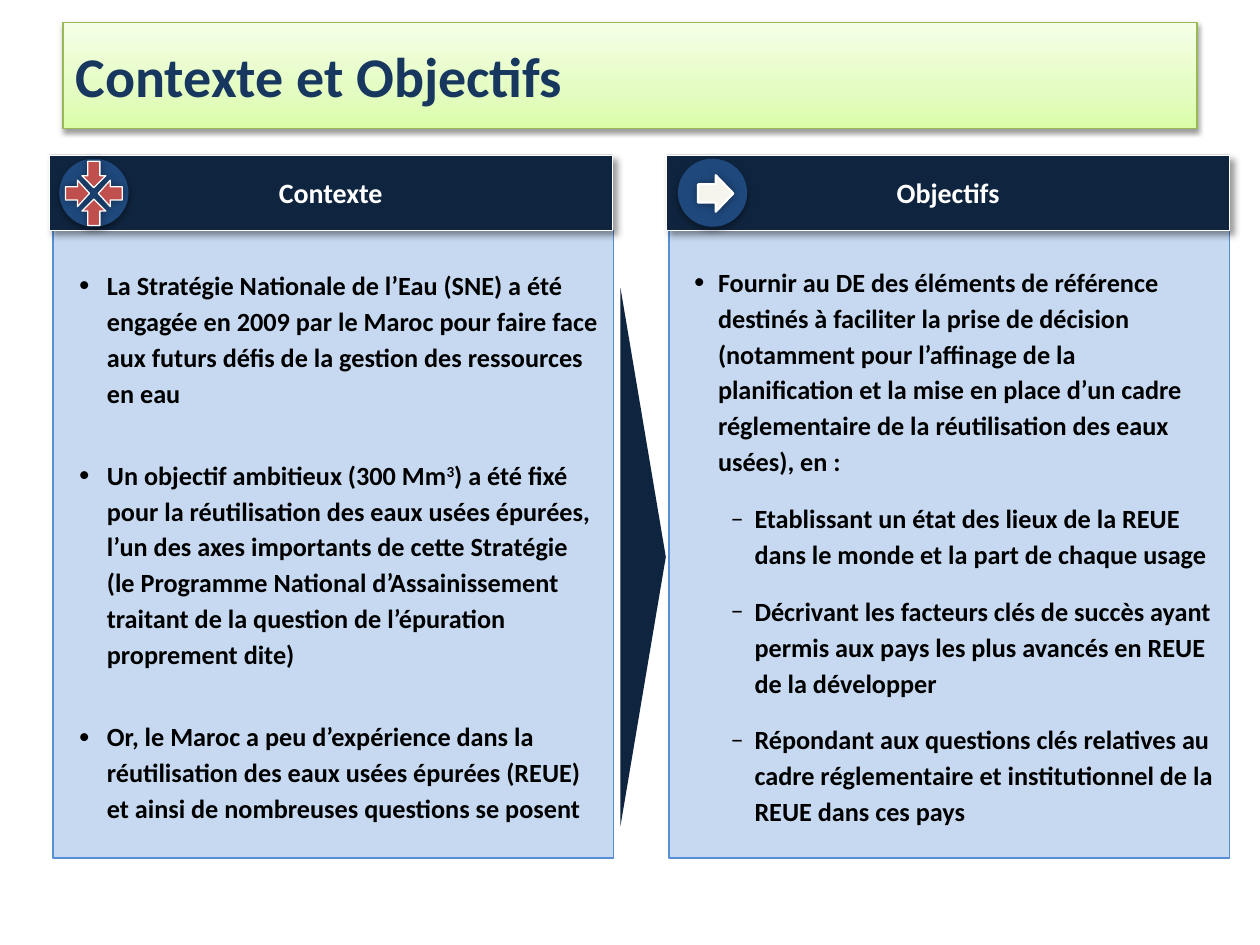
from copy import deepcopy

from lxml.etree import SubElement
from pptx import Presentation
from pptx.dml.color import RGBColor
from pptx.enum.shapes import MSO_SHAPE
from pptx.enum.text import MSO_ANCHOR, MSO_AUTO_SIZE, PP_ALIGN
from pptx.oxml.ns import qn
from pptx.util import Inches, Pt

NAVY = RGBColor(0x0F, 0x24, 0x3E)
TITLE_BLUE = RGBColor(0x17, 0x37, 0x5E)
DISC_BLUE = RGBColor(0x1F, 0x49, 0x7D)
PANEL_BLUE = RGBColor(0xC6, 0xD9, 0xF1)
EDGE_BLUE = RGBColor(0x55, 0x8E, 0xD5)
RED = RGBColor(0xC0, 0x50, 0x4D)
IVORY = RGBColor(0xF5, 0xF4, 0xED)
WHITE = RGBColor(0xFF, 0xFF, 0xFF)
BLACK = RGBColor(0, 0, 0)
GREEN_EDGE = RGBColor(0x98, 0xB9, 0x55)
GREEN_DARK = RGBColor(0xDA, 0xFD, 0xA7)
GREEN_MID = RGBColor(0xE4, 0xFC, 0xC2)
GREEN_LIGHT = RGBColor(0xF5, 0xFF, 0xE7)

TITLE_SHADOW = (38, 3.1, 1.6, 90)
HEADER_SHADOW = (40, 4, 3, 45)
DISC_SHADOW = (32, 3.5, 2.2, 90)
ARROW_SHADOW = (40, 5, 0, 0)

CONTEXT = [
    ["La Stratégie Nationale de l’Eau (SNE) a été engagée en 2009 par le Maroc pour "
     "faire face aux futurs défis de la gestion des ressources en eau"],
    ["Un objectif ambitieux (300\u00a0Mm", "3",
     ") a été fixé pour la réutilisation des eaux usées épurées, l’un des axes "
     "importants de cette Stratégie (le Programme National d’Assainissement traitant "
     "de la question de l’épuration proprement dite)"],
    ["Or, le Maroc a peu d’expérience dans la réutilisation des eaux usées épurées "
     "(REUE) et ainsi de nombreuses questions se posent"],
]
GOAL = ("Fournir au DE des éléments de référence destinés à faciliter la prise de décision "
        "(notamment pour l’affinage de la planification et la mise en place d’un cadre "
        "réglementaire de la réutilisation des eaux usées), en :")
MEANS = [
    "Etablissant un état des lieux de la REUE dans le monde et la part de chaque usage",
    "Décrivant les facteurs clés de succès ayant permis aux pays les plus avancés en REUE "
    "de la développer",
    "Répondant aux questions clés relatives au cadre réglementaire et institutionnel de la "
    "REUE dans ces pays",
]


class SlideBuilder:
    """Draws styled elements on the current slide."""

    font = "Calibri"

    def __init__(self, slide):
        self.slide = slide

    def style_font(self, font, size, color):
        font.name, font.size, font.bold = self.font, Pt(size), True
        font.color.rgb = color

    def outline(self, sp, color, width):
        sp.line.color.rgb = color
        sp.line.width = Pt(width)

    def shadow(self, sp, alpha, blur, dist, angle):
        sp.shadow.inherit = False
        effects = sp._element.spPr.find(qn("a:effectLst"))
        outer = SubElement(effects, qn("a:outerShdw"), blurRad=str(Pt(blur)),
                           dist=str(Pt(dist)), dir=str(angle * 60000), rotWithShape="0")
        color = SubElement(outer, qn("a:srgbClr"), val="000000")
        SubElement(color, qn("a:alpha"), val=str(alpha * 1000))

    def title(self, text, x, y, w, h):
        sp = self.slide.shapes.title
        sp.left, sp.top, sp.width, sp.height = map(Inches, (x, y, w, h))
        sp.fill.gradient()
        sp.fill.gradient_angle = 90
        first, last = sp.fill.gradient_stops
        first.color.rgb, last.color.rgb = GREEN_DARK, GREEN_LIGHT
        first.position, last.position = 0, 1
        stops = sp._element.spPr.find(".//" + qn("a:gsLst"))
        stops.insert(1, deepcopy(stops[0]))
        middle = sp.fill.gradient_stops[1]
        middle.color.rgb, middle.position = GREEN_MID, 0.35
        self.outline(sp, GREEN_EDGE, 0.75)
        self.shadow(sp, *TITLE_SHADOW)
        tf = sp.text_frame
        tf.text = text
        tf.auto_size = MSO_AUTO_SIZE.NONE
        tf.vertical_anchor = MSO_ANCHOR.MIDDLE
        p = tf.paragraphs[0]
        p.alignment = PP_ALIGN.LEFT
        self.style_font(p.runs[0].font, 32, TITLE_BLUE)

    def shape(self, kind, x, y, w, h, fill, line=None, width=0.75, shadow=None):
        sp = self.slide.shapes.add_shape(kind, *map(Inches, (x, y, w, h)))
        sp.fill.solid()
        sp.fill.fore_color.rgb = fill
        if line is None:
            sp.line.fill.background()
        else:
            self.outline(sp, line, width)
        if shadow:
            self.shadow(sp, *shadow)
        else:
            sp.shadow.inherit = False
        return sp

    def panel(self, x):
        sp = self.shape(MSO_SHAPE.RECTANGLE, x, 1.83, 4.45, 4.98, PANEL_BLUE, EDGE_BLUE)
        tf = sp.text_frame
        tf.word_wrap = True
        tf.vertical_anchor = MSO_ANCHOR.MIDDLE
        return tf

    def bullet(self, tf, parts, margin, hanging, before, char="●", level=1):
        p = tf.paragraphs[0] if not tf.text else tf.add_paragraph()
        p.level = level
        p.alignment = PP_ALIGN.LEFT
        p.line_spacing, p.space_before = 1.14, Pt(before)
        pPr = p._p.get_or_add_pPr()
        pPr.set("marL", str(Inches(margin)))
        pPr.set("indent", str(-Inches(hanging)))
        if char == "●":
            SubElement(pPr, qn("a:buSzPct"), val="65000")
        SubElement(pPr, qn("a:buFont"), typeface=self.font)
        SubElement(pPr, qn("a:buChar"), char=char)
        for i, part in enumerate(parts):
            r = p.add_run()
            r.text = part
            self.style_font(r.font, 15, BLACK)
            if i % 2:
                r._r.get_or_add_rPr().set("baseline", "30000")

    def header(self, text, x):
        sp = self.shape(MSO_SHAPE.RECTANGLE, x, 1.23, 4.47, 0.6, NAVY, WHITE, 0.25,
                        HEADER_SHADOW)
        tf = sp.text_frame
        tf.text = text
        tf.vertical_anchor = MSO_ANCHOR.MIDDLE
        p = tf.paragraphs[0]
        p.alignment = PP_ALIGN.CENTER
        self.style_font(p.runs[0].font, 16, WHITE)

    def disc(self, x):
        self.shape(MSO_SHAPE.OVAL, x, 1.26, 0.55, 0.54, DISC_BLUE, shadow=DISC_SHADOW)

    def arrow(self, kind, x, y, w=0.19, h=0.21, fill=RED, width=0.75):
        self.shape(kind, x, y, w, h, fill, WHITE, width, ARROW_SHADOW)

    def wedge(self, x, y, w, h):
        sp = self.shape(MSO_SHAPE.DOWN_ARROW, x, y, w, h, NAVY)
        sp.rotation = 270
        sp.adjustments[0], sp.adjustments[1] = 0.8, 1


def main():
    prs = Presentation()
    prs.slide_width, prs.slide_height = Inches(10), Inches(7.5)
    s = SlideBuilder(prs.slides.add_slide(prs.slide_layouts[5]))
    s.title("Contexte et Objectifs", 0.5, 0.18, 9, 0.84)

    tf = s.panel(0.42)
    for i, parts in enumerate(CONTEXT):
        s.bullet(tf, parts, 0.33, 0.22, 26.5 if i else 3)

    tf = s.panel(5.31)
    s.bullet(tf, [GOAL], 0.29, 0.19, 12)
    for text in MEANS:
        s.bullet(tf, [text], 0.58, 0.19, 12, "–", 2)

    s.wedge(2.97, 4.24, 4.27, 0.36)
    s.header("Contexte", 0.39)
    s.header("Objectifs", 5.29)

    s.disc(0.47)
    for kind, x, y in [(MSO_SHAPE.RIGHT_ARROW, 0.52, 1.43), (MSO_SHAPE.LEFT_ARROW, 0.78, 1.43),
                       (MSO_SHAPE.DOWN_ARROW, 0.65, 1.28), (MSO_SHAPE.UP_ARROW, 0.65, 1.58)]:
        s.arrow(kind, x, y)
    s.disc(5.38)
    s.arrow(MSO_SHAPE.RIGHT_ARROW, 5.54, 1.39, 0.28, 0.29, IVORY, 1.25)
    prs.save("out.pptx")


if __name__ == "__main__":
    main()
